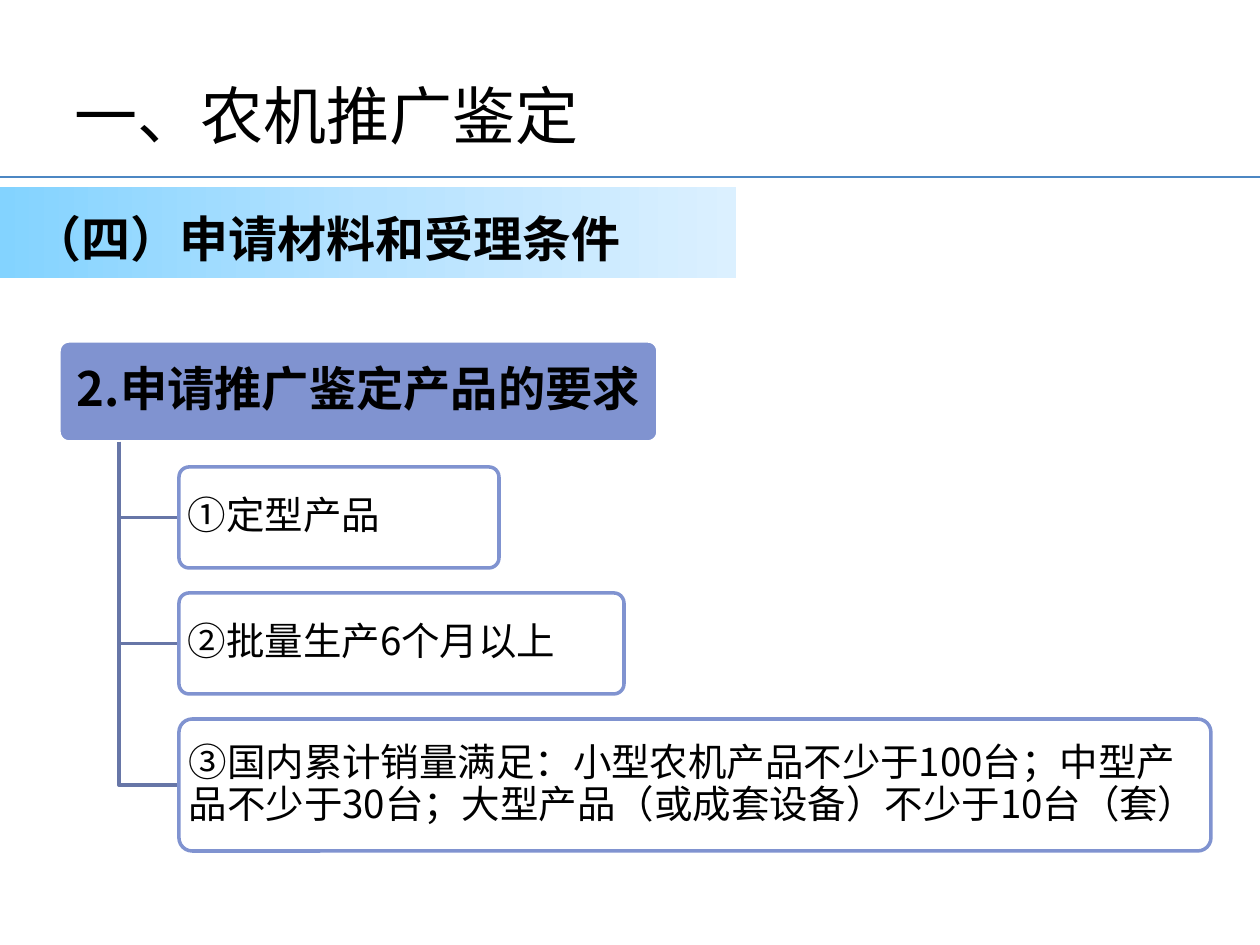
from copy import deepcopy

from lxml import etree
from pptx import Presentation
from pptx.dml.color import RGBColor
from pptx.enum.shapes import MSO_CONNECTOR, MSO_SHAPE
from pptx.enum.text import MSO_ANCHOR, MSO_AUTO_SIZE, PP_ALIGN
from pptx.oxml.ns import qn
from pptx.util import Pt

ROUND, RECT = MSO_SHAPE.ROUNDED_RECTANGLE, MSO_SHAPE.RECTANGLE
STRAIGHT = MSO_CONNECTOR.STRAIGHT
TOP, MIDDLE = MSO_ANCHOR.TOP, MSO_ANCHOR.MIDDLE
LEFT, CENTER = PP_ALIGN.LEFT, PP_ALIGN.CENTER
NO_FIT = MSO_AUTO_SIZE.NONE

BLACK = RGBColor(0x00, 0x00, 0x00)
WHITE = RGBColor(0xFF, 0xFF, 0xFF)
RULE = RGBColor(0x4C, 0x87, 0xC3)
HEAD = RGBColor(0x80, 0x93, 0xD0)
TREE = RGBColor(0x67, 0x76, 0xA7)
FADE = [RGBColor(0x83, 0xD3, 0xFF), RGBColor(0xB5, 0xE2, 0xFF),
        RGBColor(0xDB, 0xF0, 0xFF)]
FONT = "Noto Sans CJK SC"


def emu(px):
    return round(px * 914400 / 126)


class Page:
    """Draws on one slide; all lengths are in px."""

    def __init__(self, slide):
        self.slide = slide
        self.shapes = slide.shapes

    def put_text(self, shape, text, size, bold=False, align=LEFT,
                 anchor=MIDDLE, pads=(13, 6, 13, 6), space=1.0):
        """Fill a shape with text; pads are left, top, right, bottom."""
        frame = shape.text_frame
        left, top, right, bottom = map(emu, pads)
        form = {"word_wrap": True, "auto_size": NO_FIT,
                "vertical_anchor": anchor, "margin_left": left,
                "margin_top": top, "margin_right": right,
                "margin_bottom": bottom}
        for key, value in form.items():
            setattr(frame, key, value)
        para = frame.paragraphs[0]
        para.alignment, para.line_spacing = align, space
        run = para.add_run()
        run.text = text
        form = {"name": FONT, "size": Pt(size), "bold": bold}
        for key, value in form.items():
            setattr(run.font, key, value)
        run.font.color.rgb = BLACK
        etree.SubElement(run.font._element, qn("a:ea"), typeface=FONT)

    def title(self, box, text, size, **form):
        shape = self.shapes.title
        shape.left, shape.top, shape.width, shape.height = map(emu, box)
        self.put_text(shape, text, size, **form)

    def label(self, box, text, size, **form):
        shape = self.shapes.add_textbox(*map(emu, box))
        self.put_text(shape, text, size, **form)

    def rule(self, y, width):
        line = self.shapes.add_connector(
            STRAIGHT, 0, emu(y), emu(width), emu(y))
        line.line.color.rgb, line.line.width = RULE, Pt(0.75)
        etree.SubElement(line._element.spPr, qn("a:effectLst"))

    def band(self, box, colors):
        """Draw a rectangle that fades from left to right."""
        shape = self.shapes.add_shape(RECT, *map(emu, box))
        shape.shadow.inherit = False
        shape.line.fill.background()
        shape.fill.gradient()
        shape.fill.gradient_angle = 0
        first = shape._element.spPr.find(".//" + qn("a:gs"))
        first.addnext(deepcopy(first))
        last = len(colors) - 1
        for i, stop in enumerate(shape.fill.gradient_stops):
            stop.position, stop.color.rgb = i / last, colors[i]

    def card(self, box, fill, edge, text, size, **form):
        shape = self.shapes.add_shape(ROUND, *map(emu, box))
        shape.shadow.inherit = False
        shape.adjustments[0] = 0.1
        shape.fill.solid()
        shape.fill.fore_color.rgb = fill
        shape.line.color.rgb, shape.line.width = edge, Pt(2)
        self.put_text(shape, text, size, space=0.9, **form)

    def elbow(self, x, y, end_x, end_y):
        """Draw a line down and then right."""
        route = self.shapes.build_freeform(emu(x), emu(y))
        route.add_line_segments(
            [(emu(x), emu(end_y)), (emu(end_x), emu(end_y))], close=False)
        shape = route.convert_to_shape()
        shape.shadow.inherit = False
        shape.fill.background()
        shape.line.color.rgb, shape.line.width = TREE, Pt(2)


ITEMS = [
    ("①定型产品", 320, 101),
    ("②批量生产6个月以上", 445, 101),
    ("③国内累计销量满足：小型农机产品不少于100台；中型产品不少于30台；"
     "大型产品（或成套设备）不少于10台（套）", 1032, 132),
]


def main():
    deck = Presentation()
    deck.slide_width, deck.slide_height = emu(1260), emu(945)
    page = Page(deck.slides.add_slide(deck.slide_layouts[5]))

    page.title((-10, 59, 1134, 111), "一、农机推广鉴定", 36,
               pads=(85, 6, 13, 6))
    page.rule(177, 1260)
    page.band((0, 187, 736, 91), FADE)
    page.label((20, 202, 669, 72), "（四）申请材料和受理条件", 28,
               bold=True, anchor=TOP)

    page.card((59, 341, 599, 101), HEAD, WHITE, "2.申请推广鉴定产品的要求", 27,
              bold=True, align=CENTER, pads=(8, 5, 8, 5))
    left, first, pitch = 179, 467, 126
    for i, (text, width, height) in enumerate(ITEMS):
        top = first + i * pitch
        page.elbow(119, 442, left, top + height / 2)
        page.card((left, top, width, height), WHITE, HEAD, text, 22,
                  pads=(6, 4, 6, 4))

    deck.save("out.pptx")


if __name__ == "__main__":
    main()
